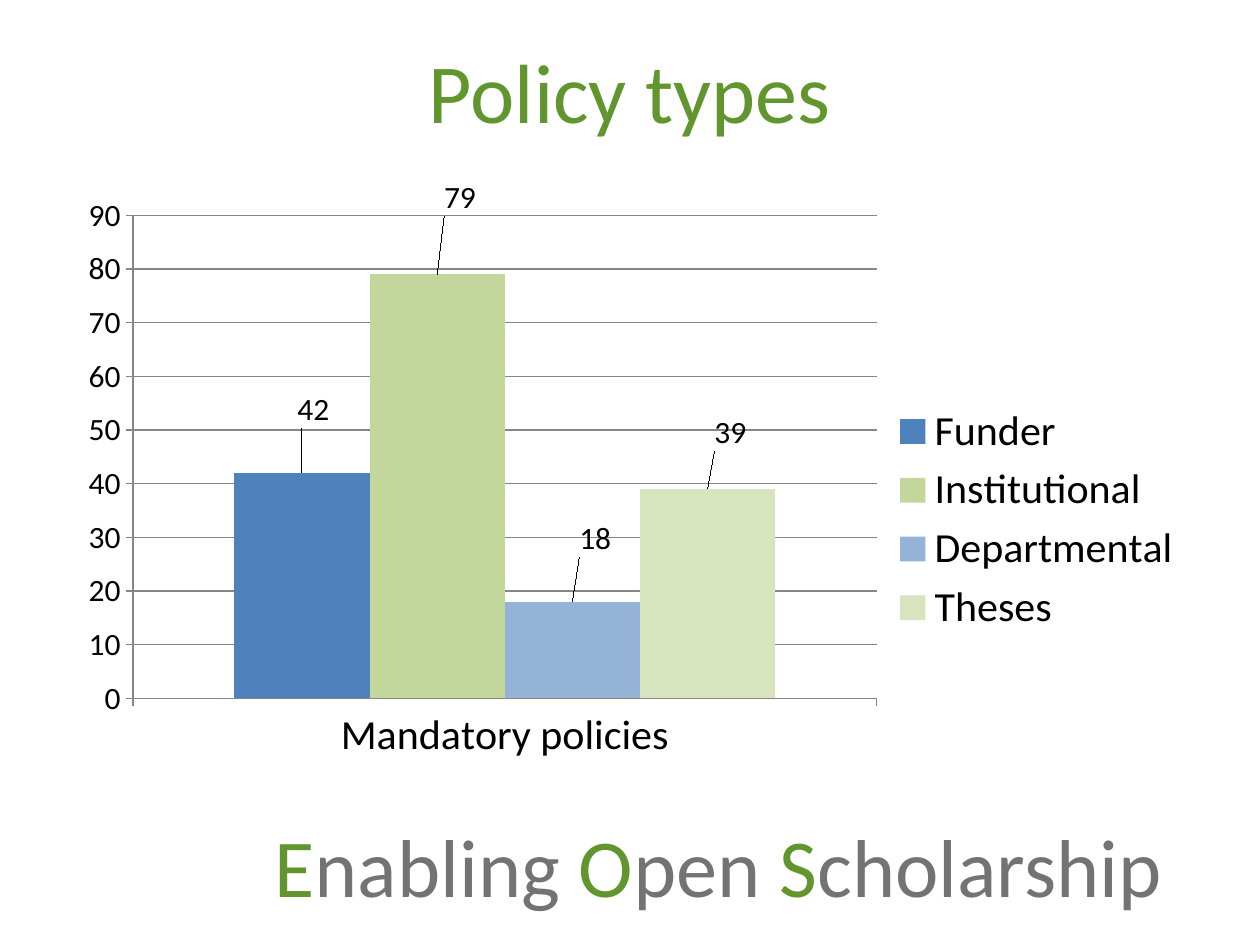
from lxml import etree
from pptx import Presentation
from pptx.chart.data import CategoryChartData
from pptx.dml.color import RGBColor
from pptx.enum.chart import XL_CHART_TYPE, XL_LABEL_POSITION, XL_LEGEND_POSITION, XL_TICK_MARK
from pptx.enum.text import MSO_ANCHOR, MSO_AUTO_SIZE, PP_ALIGN
from pptx.oxml import parse_xml
from pptx.oxml.ns import nsdecls, qn
from pptx.util import Inches, Pt

CLUSTERED = XL_CHART_TYPE.COLUMN_CLUSTERED
OUTSIDE_END = XL_LABEL_POSITION.OUTSIDE_END
LEGEND_RIGHT = XL_LEGEND_POSITION.RIGHT
TICK_OUTSIDE = XL_TICK_MARK.OUTSIDE
MIDDLE = MSO_ANCHOR.MIDDLE
GROW = MSO_AUTO_SIZE.SHAPE_TO_FIT_TEXT
CENTER = PP_ALIGN.CENTER

FONT = "Calibri"
GREEN = "61952D"
BLACK = "000000"
AXIS_GREY = "868686"

# Name, value, colour, label shift as fractions of the chart's width and height
POLICIES = [
    ("Funder", 42, "4F81BD", (0.01, -0.06)),
    ("Institutional", 79, "C3D69B", (0.02, -0.08)),
    ("Departmental", 18, "95B3D7", (0.02, -0.06)),
    ("Theses", 39, "D7E4BD", (0.02, -0.05)),
]
MOTTO = ["Enabling ", "Open ", "Scholarship"]


def rgb(color):
    return RGBColor.from_string(color)


def set_font(font, size, color):
    font.name = FONT
    font.size = Pt(size)
    font.color.rgb = rgb(color)


def add_span(para, text, size, color, opacity=None):
    """Add a run; opacity is a percentage."""
    span = para.add_run()
    span.text = text
    set_font(span.font, size, color)
    if opacity is not None:
        fill = span.font._element.find(qn("a:solidFill"))
        alpha = etree.SubElement(fill[0], qn("a:alpha"))
        alpha.set("val", str(opacity * 1000))


def set_title(page, text):
    title = page.shapes.title
    title.left, title.top = Inches(0.5), Inches(0)
    title.width, title.height = Inches(9), Inches(1.42)
    title.text_frame.vertical_anchor = MIDDLE
    para = title.text_frame.paragraphs[0]
    para.alignment = CENTER
    add_span(para, text, 48, GREEN)


def add_motto(page):
    box = page.shapes.add_textbox(Inches(2.08), Inches(6.42), Inches(7.67), Inches(0.89))
    box.text_frame.word_wrap = True
    box.text_frame.auto_size = GROW
    para = box.text_frame.paragraphs[0]
    for word in MOTTO:
        add_span(para, word[0], 47, GREEN)
        add_span(para, word[1:], 47, BLACK, opacity=54)


def manual_layout(x, y, size=None):
    """Build a c:layout; with a size it fixes the inner plot area, else it shifts a label."""
    parts = [("x", x), ("y", y)]
    if size:
        parts = [("layoutTarget", "inner"), ("xMode", "edge"), ("yMode", "edge"),
                 *parts, ("w", size[0]), ("h", size[1])]
    body = "".join(f'<c:{name} val="{value}"/>' for name, value in parts)
    return parse_xml(f'<c:layout {nsdecls("c")}><c:manualLayout>{body}</c:manualLayout></c:layout>')


def place_plot(chart, x, y, width, height):
    plot_area = chart._chartSpace.chart.plotArea
    for layout in plot_area.findall(qn("c:layout")):
        plot_area.remove(layout)
    plot_area.insert(0, manual_layout(x, y, (width, height)))


def style_axis(axis, size):
    axis.major_tick_mark = TICK_OUTSIDE
    set_font(axis.tick_labels.font, size, BLACK)
    style_line(axis.format.line)


def style_line(line):
    line.color.rgb = rgb(AXIS_GREY)
    line.width = Pt(0.75)


def style_series(series, color, shift):
    series.format.fill.solid()
    series.format.fill.fore_color.rgb = rgb(color)
    series.invert_if_negative = False
    series.data_labels.show_value = True
    set_font(series.data_labels.font, 18, BLACK)
    label = series.points[0].data_label
    set_font(label.font, 18, BLACK)
    label.position = OUTSIDE_END
    label_xml = series._element.find(f'{qn("c:dLbls")}/{qn("c:dLbl")}')
    label_xml.find(qn("c:idx")).addnext(manual_layout(*shift))


def add_policy_chart(page):
    data = CategoryChartData()
    data.categories = ["Mandatory policies"]
    for name, value, _, _ in POLICIES:
        data.add_series(name, [value])
    chart = page.shapes.add_chart(
        CLUSTERED, Inches(0.42), Inches(1.42), Inches(9.08), Inches(5.33), data).chart
    chart.has_title = False
    set_font(chart.font, 18, BLACK)
    place_plot(chart, 0.07, 0.04, 0.65, 0.73)

    chart.has_legend = True
    chart.legend.position = LEGEND_RIGHT
    chart.legend.include_in_layout = False
    set_font(chart.legend.font, 24, BLACK)

    style_axis(chart.category_axis, 24)
    style_axis(chart.value_axis, 18)
    chart.value_axis.minimum_scale = 0
    chart.value_axis.maximum_scale = 90
    chart.value_axis.major_unit = 10
    style_line(chart.value_axis.major_gridlines.format.line)

    plot = chart.plots[0]
    plot.vary_by_categories = False
    plot.gap_width = 150
    plot.overlap = 0
    for series, (_, _, color, shift) in zip(plot.series, POLICIES):
        style_series(series, color, shift)


def main():
    deck = Presentation()
    deck.slide_width, deck.slide_height = Inches(10), Inches(7.5)
    page = deck.slides.add_slide(deck.slide_layouts.get_by_name("Title Only"))
    add_motto(page)
    set_title(page, "Policy types")
    add_policy_chart(page)
    deck.save("out.pptx")


if __name__ == "__main__":
    main()
